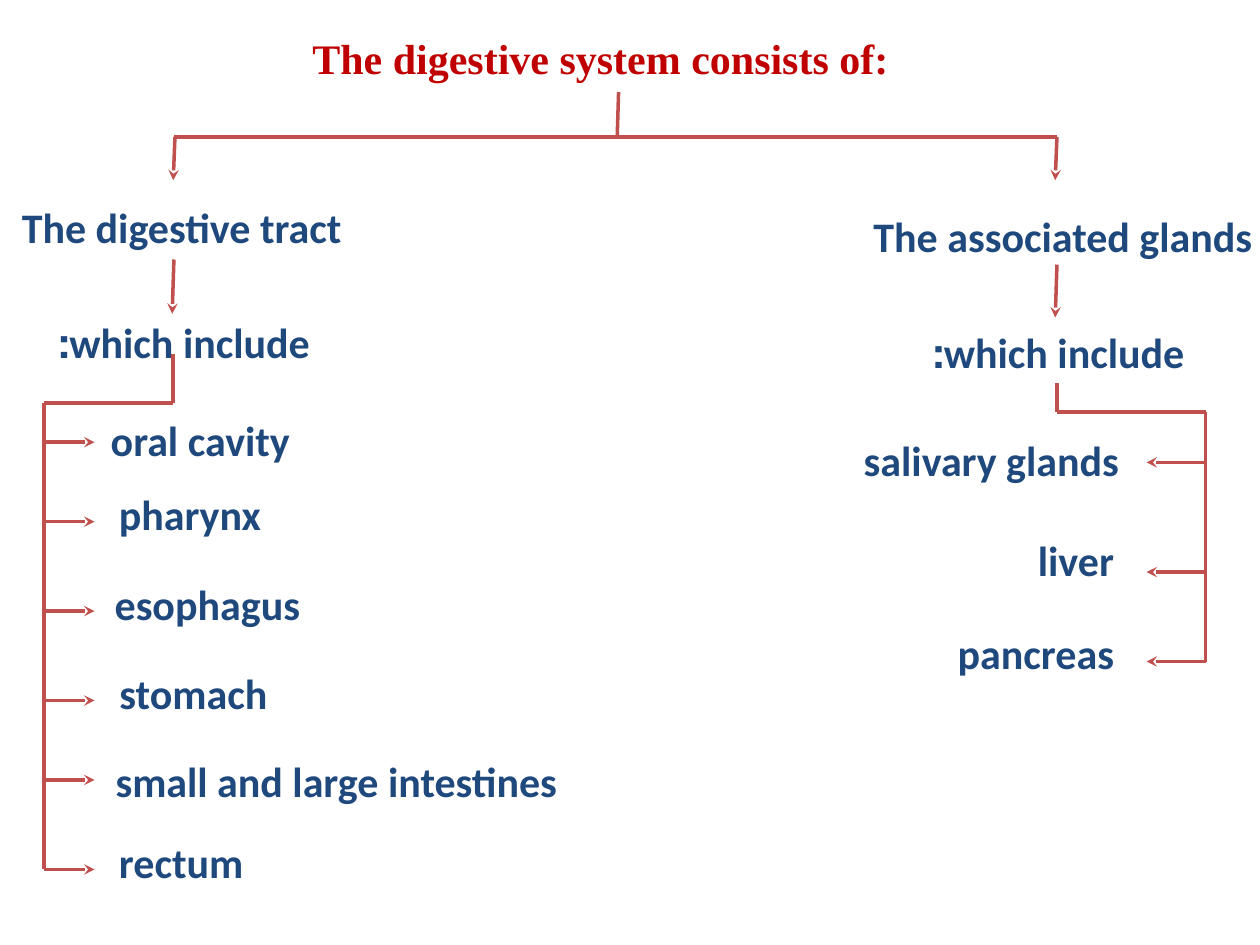
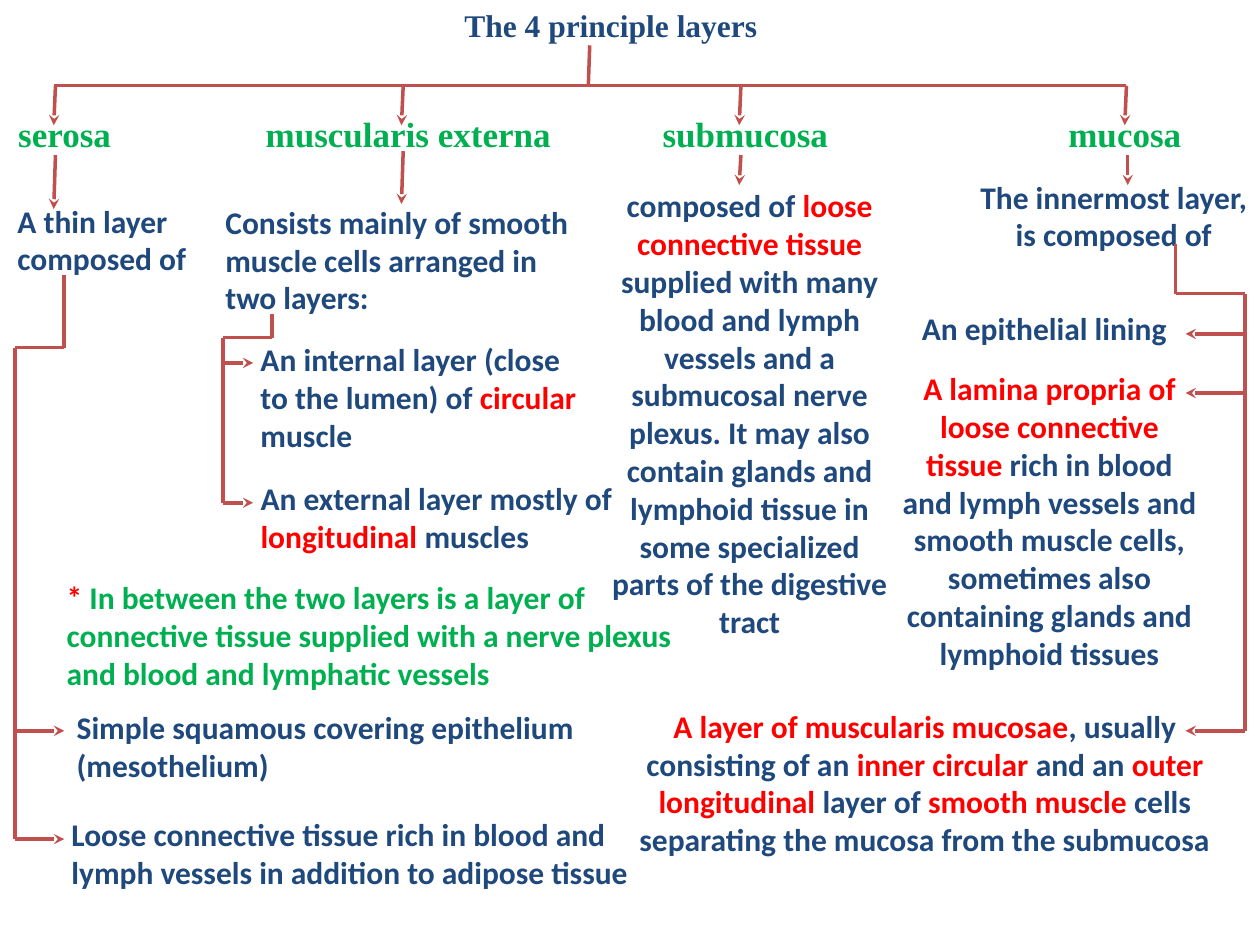
from pptx import Presentation
from pptx.dml.color import RGBColor
from pptx.enum import shapes, text
from pptx.oxml import ns
from pptx.util import Pt
from lxml import etree

NAVY = RGBColor(0x1F, 0x49, 0x7D)
WINE = RGBColor(0xC0, 0x00, 0x00)
RED = RGBColor(0xFF, 0x00, 0x00)
GREEN = RGBColor(0x00, 0xB0, 0x50)
BRICK = RGBColor(0xC0, 0x50, 0x4D)
SANS, SERIF = "Calibri", "Times New Roman"
LEFT, MID, RIGHT = (text.PP_ALIGN.LEFT, text.PP_ALIGN.CENTER,
                    text.PP_ALIGN.RIGHT)


class Deck:
    """Holds the shared style and the current slide."""

    def __init__(self):
        self.prs = Presentation()
        self.prs.slide_width, self.prs.slide_height = Pt(720), Pt(540)
        self.slide = None

    def page(self):
        self.slide = self.prs.slides.add_slide(self.prs.slide_layouts[6])

    def note(self, words, x, y, w, h, size=18, font=SANS, color=NAVY,
             align=LEFT, wrap=True, rtl=False):
        """Add bold text; parts between bars are red."""
        box = self.slide.shapes.add_textbox(Pt(x), Pt(y), Pt(w), Pt(h))
        frame = box.text_frame
        frame.word_wrap = wrap
        frame.auto_size = text.MSO_AUTO_SIZE.SHAPE_TO_FIT_TEXT
        par = frame.paragraphs[0]
        par.alignment = RIGHT if rtl else align
        if rtl:
            par._p.get_or_add_pPr().set("rtl", "1")
        for i, part in enumerate(words.split("|")):
            if part:
                run = par.add_run()
                run.text = part
                run.font.name, run.font.size = font, Pt(size)
                run.font.bold = True
                run.font.color.rgb = RED if i % 2 else color

    def label(self, words, x, y, w):
        self.note(words, x, y, w, 36.5, size=24, wrap=False, rtl=True)

    def line(self, x1, y1, x2, y2, arrow=False):
        rule = self.slide.shapes.add_connector(
            shapes.MSO_CONNECTOR.STRAIGHT, Pt(x1), Pt(y1), Pt(x2), Pt(y2))
        rule.line.color.rgb = BRICK
        rule.line.width = Pt(2)
        props = rule._element.spPr
        if arrow:
            tip = etree.SubElement(props.find(ns.qn("a:ln")),
                                   ns.qn("a:tailEnd"))
            tip.set("type", "stealth")
        etree.SubElement(props, ns.qn("a:effectLst"))

    def drop(self, x, top, end, lean=1):
        self.line(x, top, x - lean, end, arrow=True)

    def tree(self, root, top, bar, end, stems):
        """Root line, crossbar and an arrow down to each branch."""
        self.line(root, top, root - 0.8, bar)
        self.line(max(stems), bar, min(stems) - 0.7, bar)
        for x in stems:
            self.drop(x, bar, end)

    def rail(self, stem, top, bar, side, tip, rows):
        """Stem, side rail and an arrow to each listed item."""
        self.line(stem, top, stem, bar)
        self.line(stem, bar, side, bar)
        self.line(side, bar, side, rows[-1])
        for y in rows:
            self.line(side, y, tip, y, arrow=True)


def system(deck):
    deck.page()
    deck.note("The digestive system consists of:", 171.4, 15.1, 347, 36.5,
              size=24, font=SERIF, color=WINE, wrap=False)
    # Branch names and their items
    for item in (
            ("The digestive tract ", -2.9, 111.6, 205.2),
            ("The associated glands ", 483.8, 116.6, 239),
            ("which include: ", 18.7, 177.1, 165.6),
            ("which include: ", 518.4, 182.9, 165.6),
            ("oral cavity", 54.7, 233.3, 118.1),
            ("pharynx", 59.8, 275.8, 96.5),
            ("esophagus", 56.9, 326.9, 121.7),
            ("stomach", 59.8, 378, 100.1),
            ("small and large intestines", 56.2, 428.4, 269.3),
            ("rectum", 59.8, 474.5, 86.4),
            ("salivary glands", 484.6, 244.8, 162),
            ("liver ", 579.6, 301.7, 64.1),
            ("pancreas", 538.6, 355, 105.1)):
        deck.label(*item)
    # Lines and arrows
    deck.tree(353.5, 52.6, 78.2, 103, (100, 604))
    deck.drop(99.4, 148.3, 179.3)
    deck.drop(604, 151.2, 181.4)
    deck.rail(98.9, 202.3, 230.4, 25.2, 54,
              (252.7, 298.1, 349.2, 400.3, 445.7, 496.8))
    deck.rail(604, 218.9, 235.4, 689, 655.2, (264.2, 326.9, 378))


def layers(deck):
    deck.page()
    deck.note(" The 4 principle layers", 257, 0, 188, 29, font=SERIF,
              wrap=False, rtl=True)
    # Layer names
    for name, x, w in (("serosa", 2.9, 67.7),
                       ("muscularis externa", 144.7, 178.6),
                       ("submucosa", 371.5, 109.4),
                       ("mucosa", 603.4, 79.2)):
        deck.note(name, x, 60.5, w, 31.7, size=20, font=SERIF, color=GREEN,
                  wrap=False, rtl=name == "serosa")
    # Serosa and muscularis externa
    for item in (
            ("A thin layer composed of", 2.9, 111.6, 113.8, 51),
            ("Simple squamous covering epithelium (mesothelium)",
             36.7, 401, 339.8, 51),
            ("Loose connective tissue rich in blood and lymph vessels in "
             "addition to adipose tissue", 33.8, 462.2, 360, 51),
            ("Consists mainly of smooth muscle cells arranged in two layers:",
             121.7, 112.3, 212.4, 72.7),
            ("An internal layer (close to the lumen) of |circular| muscle",
             141.8, 190.8, 198.7, 72.7),
            ("An external layer mostly of |longitudinal| muscles",
             141.8, 270, 229.7, 51)):
        deck.note(*item)
    deck.note("|*| In between the two layers is a layer of connective tissue "
              "supplied with a nerve plexus and blood and lymphatic vessels",
              31, 326.9, 360, 72.7, color=GREEN)
    # Submucosa and mucosa
    for item in (
            ("composed of |loose connective tissue| supplied with many blood "
             "and lymph vessels and a submucosal nerve plexus. It may also "
             "contain glands and lymphoid tissue in some specialized parts "
             "of the digestive tract", 337.7, 103, 181.4, 269.3),
            ("The innermost layer, is composed of", 550.1, 97.9, 172.8, 51),
            ("|A lamina propria of loose connective tissue |rich in blood and "
             "lymph vessels and smooth muscle cells, sometimes also "
             "containing glands and lymphoid tissues",
             507.6, 207.4, 184.3, 181.4),
            ("|A layer of muscularis mucosae|, usually consisting of an "
             "|inner circular |and an |outer longitudinal| layer of "
             "|smooth muscle |cells separating the mucosa from the submucosa",
             348.5, 400.3, 360, 94.3)):
        deck.note(*item, align=MID)
    deck.note("An epithelial lining", 518.4, 172.8, 155.5, 29, wrap=False,
              rtl=True)
    # Lines and arrows
    deck.tree(337, 25.9, 49, 71.6, (31.7, 230.4, 423.4, 643.7))
    deck.drop(31.7, 88.6, 119.5)
    deck.drop(230.4, 86.4, 116.6)
    deck.drop(423.4, 88.6, 105.8)
    deck.drop(644.4, 88.6, 105.8, lean=0)
    deck.rail(36.7, 157, 198.7, 8.6, 36.7, (417.6, 479.5))
    deck.rail(155.5, 179.3, 193, 127.4, 144.7, (207.4, 287.3))
    deck.rail(671.8, 139.7, 167.8, 711.4, 677.5, (190.8, 224.6, 417.6))


def main():
    deck = Deck()
    system(deck)
    layers(deck)
    deck.prs.save("out.pptx")


if __name__ == "__main__":
    main()
